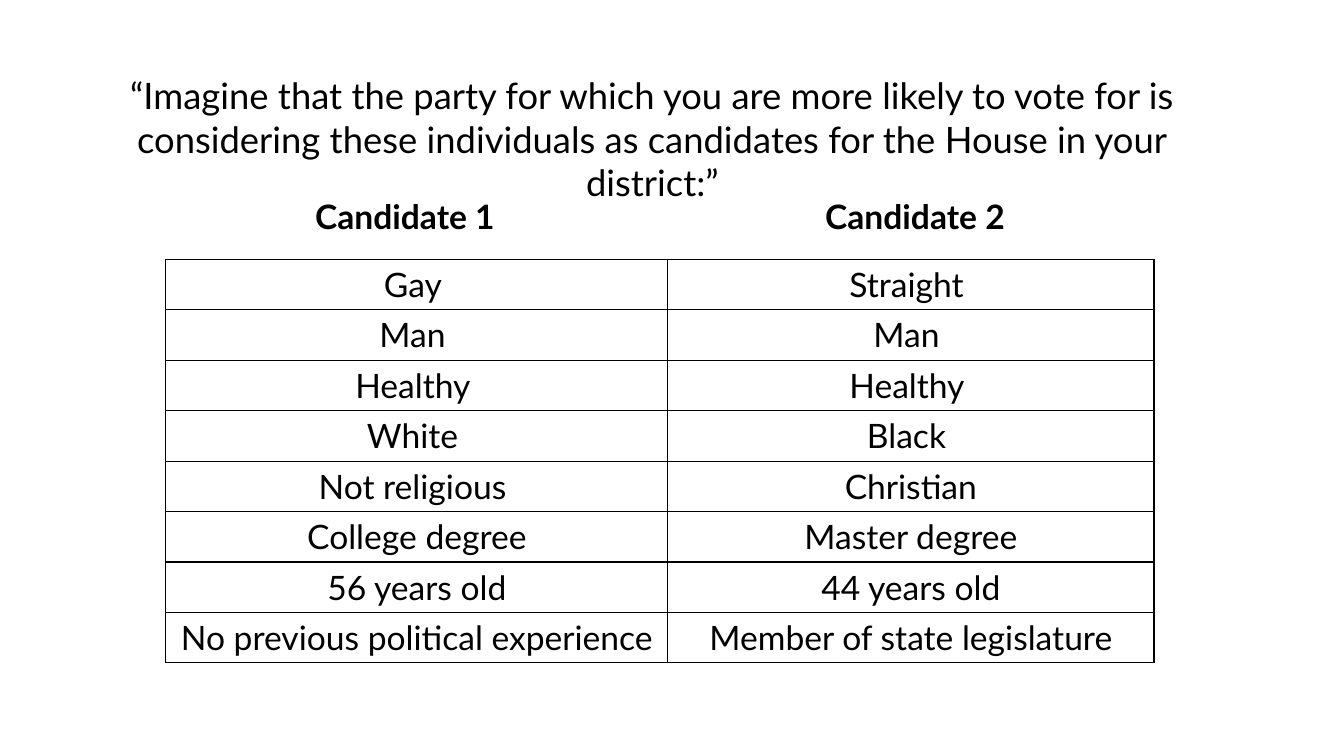
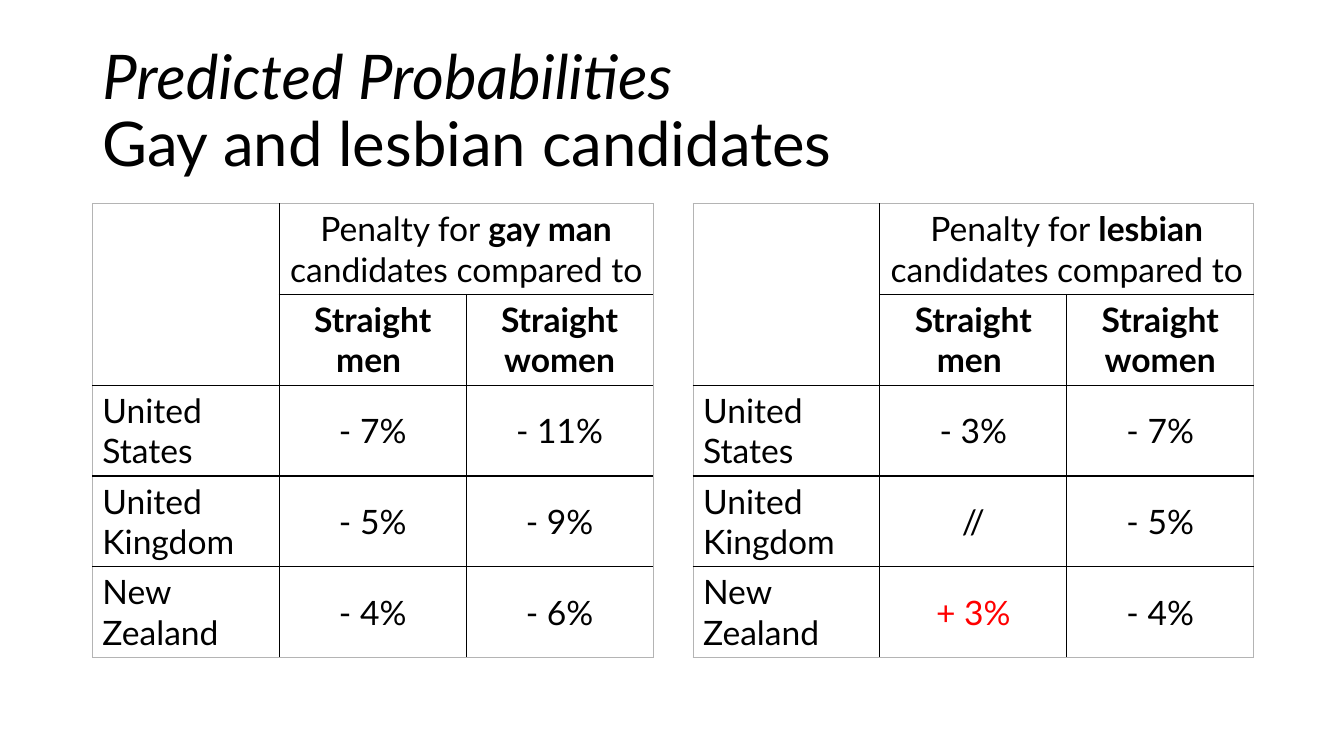
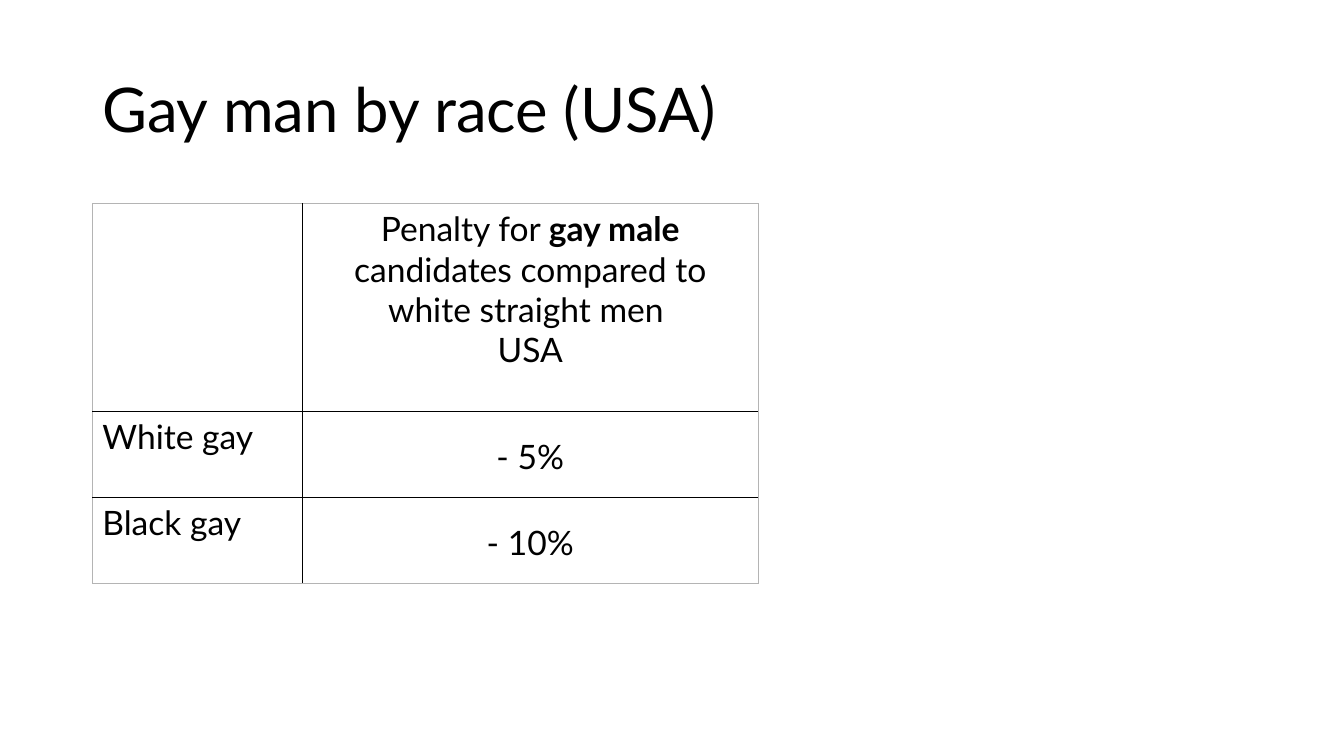
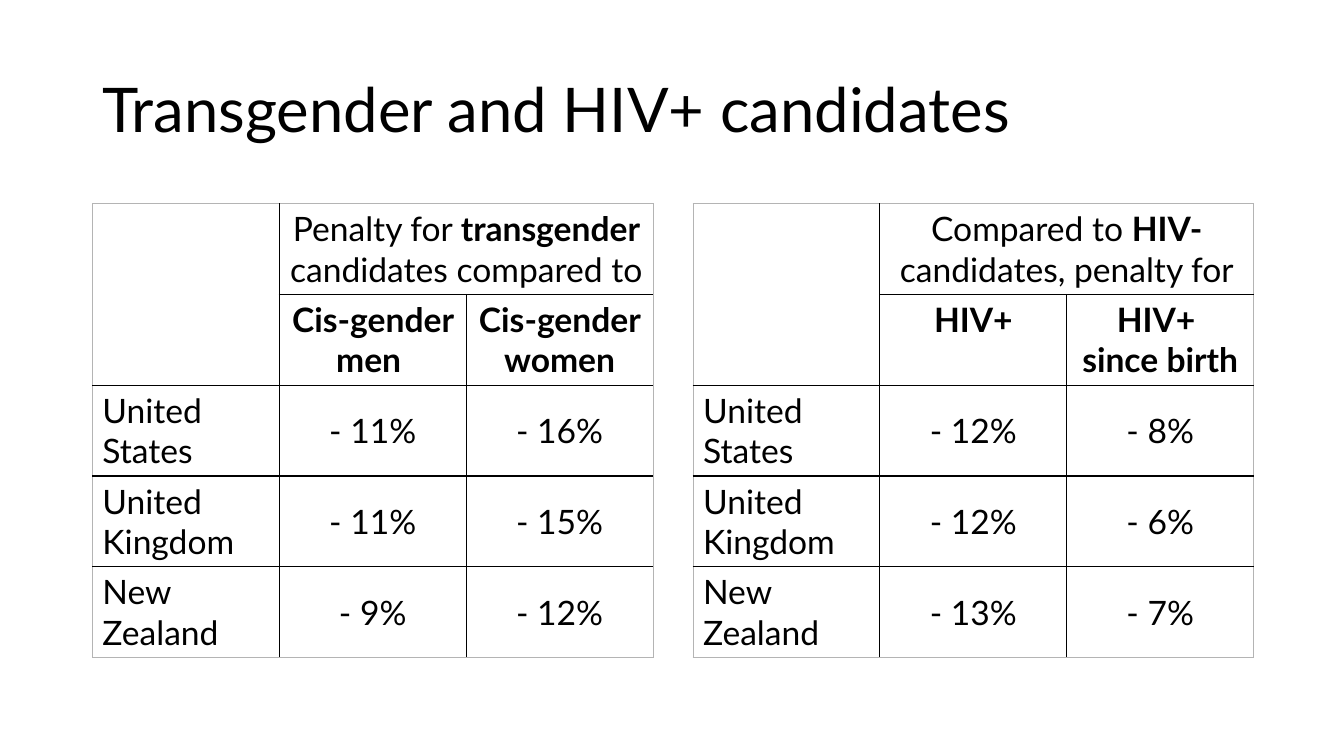
import pptx
import pptx.dml.color
import pptx.enum.text
import pptx.oxml
import pptx.oxml.ns
import pptx.util

PX = 9525  # EMU per px, 96 px to the inch
BLACK = pptx.dml.color.RGBColor(0x00, 0x00, 0x00)
RED = pptx.dml.color.RGBColor(0xFF, 0x00, 0x00)
GREY = pptx.dml.color.RGBColor(0xB4, 0xB4, 0xB4)
FONT = "Lato"
LEFT = pptx.enum.text.PP_ALIGN.LEFT
CENTER = pptx.enum.text.PP_ALIGN.CENTER
TOP = pptx.enum.text.MSO_ANCHOR.TOP
MIDDLE = pptx.enum.text.MSO_ANCHOR.MIDDLE

TITLE_BOX = (88, 38, 1104, 139)
TABLE_TOP = 194
COUNTRIES = ["United States", "United Kingdom", "New Zealand"]


def add_text(s, box, text, size, align=CENTER, anchor=TOP, bold=False):
    """Add a text box and return its paragraph."""
    tf = s.shapes.add_textbox(*[v * PX for v in box]).text_frame
    tf.word_wrap = True
    tf.vertical_anchor = anchor
    p = tf.paragraphs[0]
    p.alignment = align
    p.font.name, p.font.size = FONT, pptx.util.Pt(size)
    p.font.bold, p.font.color.rgb = bold, BLACK
    if text:
        p.add_run().text = text
    return p


def add_table(s, x, y, cols, row_heights, rows, edge, merges=(), labels=False):
    """Add a ruled table; bars in a cell's text enclose its bold part."""
    tbl = s.shapes.add_table(len(rows), len(cols), x * PX, y * PX,
                             sum(cols) * PX, sum(row_heights) * PX).table
    tbl.first_row = tbl.horz_banding = False
    for i, width in enumerate(cols):
        tbl.columns[i].width = width * PX
    for i, height in enumerate(row_heights):
        tbl.rows[i].height = height * PX
    for (r1, c1), (r2, c2) in merges:
        tbl.cell(r1, c1).merge(tbl.cell(r2, c2))

    for i, row in enumerate(rows):
        for j, text in enumerate(row):
            cell = tbl.cell(i, j)
            # Borders: outer edges may differ from the inner rules
            tcPr = cell._tc.get_or_add_tcPr()
            outer = {"L": j == 0, "R": j + cell.span_width == len(cols),
                     "T": i == 0, "B": i + cell.span_height == len(rows)}
            for side, is_outer in outer.items():
                color = edge if is_outer else BLACK
                width = 6350 if color == GREY else 12700
                tcPr.append(pptx.oxml.parse_xml(
                    f'<a:ln{side} {pptx.oxml.ns.nsdecls("a")} w="{width}"><a:solidFill>'
                    f'<a:srgbClr val="{color}"/></a:solidFill></a:ln{side}>'))
            cell.fill.background()

            # Text: figures sit lower than headings and row labels
            if text[:1] in ("-", "+", "/"):
                cell.margin_top = 24 * PX
            for k, line in enumerate(text.split("\n")):
                tf = cell.text_frame
                p = tf.add_paragraph() if k else tf.paragraphs[0]
                p.alignment = LEFT if labels and j == 0 else CENTER
                p.font.name, p.font.size = FONT, pptx.util.Pt(24)
                p.font.color.rgb = RED if line.startswith("+") else BLACK
                for n, part in enumerate(line.split("|")):
                    if part:
                        r = p.add_run()
                        r.text = part
                        r.font.bold = n % 2 == 1


prs = pptx.Presentation()
prs.slide_width, prs.slide_height = 1280 * PX, 720 * PX
blank = prs.slide_layouts[6]

# Slide 1: the two candidates
s = prs.slides.add_slide(blank)
candidates = [
    ["Gay ", "Straight "],
    ["Man ", "Man "],
    ["Healthy ", "Healthy "],
    ["White ", "Black "],
    ["Not religious ", "Christian"],
    ["College degree", "Master degree"],
    ["56 years old", "44 years old"],
    ["No previous political experience", "Member of state legislature"],
]
add_table(s, 158, 247, [478, 463], [48] * len(candidates), candidates, BLACK)
add_text(s, (174, 182, 431, 48), "Candidate 1 ", 24, bold=True)
add_text(s, (664, 182, 415, 48), "Candidate 2", 24, bold=True)
add_text(s, (54, 65, 1135, 134),
         "“Imagine that the party for which you are more likely to vote for is "
         "considering these individuals as candidates for the House in your district:”", 26)

# Slides 2 to 4: titles
gay_lesbian, by_race, trans_hiv = [prs.slides.add_slide(blank) for _ in range(3)]
p = add_text(gay_lesbian, TITLE_BOX, "", 44, LEFT, MIDDLE)
p.line_spacing = 0.9
r = p.add_run()
r.text = "Predicted Probabilities"
r.font.italic = True
p.add_line_break()
p.add_run().text = "Gay and lesbian candidates"
for s, title in [(by_race, "Gay man by race (USA)"),
                 (trans_hiv, "Transgender and HIV+ candidates")]:
    add_text(s, TITLE_BOX, title, 44, LEFT, MIDDLE).line_spacing = 0.9

# Slides 2 and 4: penalties by country, two tables side by side
straight = ["|Straight men |", "|Straight women|"]
country_tables = [
    (gay_lesbian, 88, "Penalty for |gay man |candidates compared to", straight,
     [("- 7%", "- 11%"), ("- 5%", "- 9%"), ("- 4%", "- 6%")]),
    (gay_lesbian, 660, "Penalty for |lesbian |candidates compared to", straight,
     [("- 3%", "- 7%"), ("//", "- 5%"), ("+ 3%", "- 4%")]),
    (trans_hiv, 88, "Penalty for |transgender |candidates compared to",
     ["|Cis-gender men |", "|Cis-gender women|"],
     [("- 11%", "- 16%"), ("- 11%", "- 15%"), ("- 9%", "- 12%")]),
    (trans_hiv, 660, "Compared to |HIV-| candidates, penalty for",
     ["|HIV+|", "|HIV+ |\n|since birth|"],
     [("- 12%", "- 8%"), ("- 12%", "- 6%"), ("- 13%", "- 7%")]),
]
for s, x, heading, groups, values in country_tables:
    rows = [["", heading, ""], ["", *groups]]
    rows += [[country, *pair] for country, pair in zip(COUNTRIES, values)]
    add_table(s, x, TABLE_TOP, [178] * 3, [86] * 5, rows, GREY,
              merges=[((0, 0), (1, 0)), ((0, 1), (0, 2))], labels=True)

# Slide 3: penalties by race
race_rows = [
    ["", "Penalty for |gay male |candidates compared to\nwhite straight men \nUSA"],
    ["White gay", "- 5%"],
    ["Black gay", "- 10%"],
]
add_table(by_race, 88, TABLE_TOP, [200, 434], [198, 82, 82], race_rows, GREY, labels=True)

prs.save("out.pptx")
